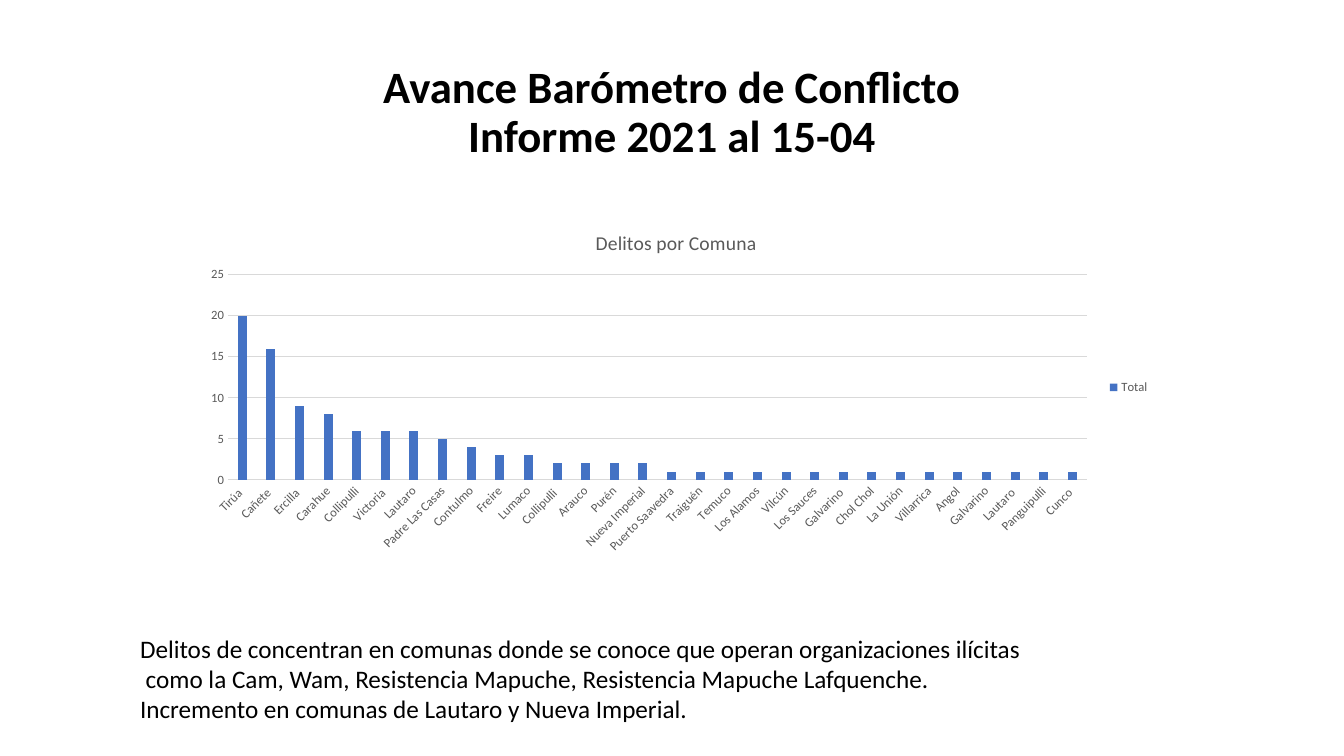
import pptx
import pptx.chart.data
import pptx.dml.color
import pptx.enum.chart
import pptx.enum.text
import pptx.util
from lxml import etree

Cm, Pt = pptx.util.Cm, pptx.util.Pt

# Content
HEADING = ["Avance Barómetro de Conflicto\vInforme 2021 al 15-04"]
FINDINGS = [
    "Delitos de concentran en comunas donde se conoce que operan organizaciones ilícitas",
    " como la Cam, Wam, Resistencia Mapuche, Resistencia Mapuche Lafquenche.",
    "Incremento en comunas de Lautaro y Nueva Imperial.",
]
CHART_TITLE = "Delitos por Comuna"
SERIES_NAME = "Total"
CRIMES_BY_COMMUNE = [
    ("Tirúa ", 20), ("Cañete ", 16), ("Ercilla ", 9), ("Carahue", 8),
    ("Collipulli", 6), ("Victoria ", 6), ("Lautaro", 6),
    ("Padre Las Casas", 5), ("Contulmo", 4), ("Freire", 3), ("Lumaco", 3),
    ("Collipulli ", 2), ("Arauco", 2), ("Purén", 2), ("Nueva Imperial", 2),
    ("Puerto Saavedra", 1), ("Traiguén", 1), ("Temuco", 1),
    ("Los Alamos", 1), ("Vilcún", 1), ("Los Sauces", 1), ("Galvarino ", 1),
    ("Chol Chol", 1), ("La Unión", 1), ("Villarrica", 1), ("Angol", 1),
    ("Galvarino", 1), ("Lautaro ", 1), ("Panguipulli", 1), ("Cunco ", 1),
]
FONT = "Calibri"
BLACK, GREY, RULE, BAR = "000000", "595959", "D9D9D9", "4472C4"
# Inner plot area, in percent of the chart
PLOT_AREA = {"x": 3.67, "y": 17.6, "w": 88.77, "h": 59.05}


def color(hex_string):
    return pptx.dml.color.RGBColor.from_string(hex_string)


def style_font(font, size, hex_string, bold=False):
    font.name, font.size, font.bold = FONT, Pt(size), bold
    font.color.rgb = color(hex_string)


def add_text(slide, lines, box, size, bold=False, align="LEFT", anchor="TOP",
             spacing=1.0, wrap=True):
    frame = slide.shapes.add_textbox(*map(Cm, box)).text_frame
    frame.word_wrap = wrap
    frame.vertical_anchor = getattr(pptx.enum.text.MSO_ANCHOR, anchor)
    if not wrap:
        frame.auto_size = pptx.enum.text.MSO_AUTO_SIZE.SHAPE_TO_FIT_TEXT
    frame.text = "\n".join(lines)
    for paragraph in frame.paragraphs:
        paragraph.alignment = getattr(pptx.enum.text.PP_ALIGN, align)
        paragraph.line_spacing = spacing
        for run in paragraph.runs:
            style_font(run.font, size, BLACK, bold)


def style_line(line, hex_string, width=0.75):
    line.color.rgb = color(hex_string)
    line.width = Pt(width)


def set_plot_area(chart):
    plot_area = chart.element.chart.plotArea
    namespace = etree.QName(plot_area).namespace
    for old in plot_area.findall(f"{{{namespace}}}layout"):
        plot_area.remove(old)
    layout = etree.Element(f"{{{namespace}}}layout")
    manual = etree.SubElement(layout, f"{{{namespace}}}manualLayout")
    settings = {"layoutTarget": "inner", "xMode": "edge", "yMode": "edge"}
    settings.update((side, share / 100) for side, share in PLOT_AREA.items())
    for tag, value in settings.items():
        etree.SubElement(manual, f"{{{namespace}}}{tag}").set("val", str(value))
    plot_area.insert(0, layout)


def add_crime_chart(slide, box):
    crimes = pptx.chart.data.CategoryChartData()
    communes, counts = zip(*CRIMES_BY_COMMUNE)
    crimes.categories = communes
    crimes.add_series(SERIES_NAME, counts)
    kinds = pptx.enum.chart
    chart = slide.shapes.add_chart(
        kinds.XL_CHART_TYPE.COLUMN_CLUSTERED, *map(Cm, box), crimes).chart
    style_font(chart.font, 10, BLACK)
    set_plot_area(chart)

    # Title and legend
    chart.has_title = True
    chart.chart_title.include_in_layout = False
    chart_title = chart.chart_title.text_frame
    chart_title.text = CHART_TITLE
    style_font(chart_title.paragraphs[0].runs[0].font, 14, GREY)
    chart.has_legend = True
    chart.legend.position = kinds.XL_LEGEND_POSITION.RIGHT
    chart.legend.include_in_layout = False
    style_font(chart.legend.font, 9, GREY)

    # Bars
    bars = chart.plots[0]
    bars.vary_by_categories = False
    bars.gap_width, bars.overlap = 219, -27
    fill = bars.series[0].format.fill
    fill.solid()
    fill.fore_color.rgb = color(BAR)

    # Axes, with commune labels turned 45 degrees
    communes_axis, counts_axis = chart.category_axis, chart.value_axis
    for axis in (communes_axis, counts_axis):
        axis.major_tick_mark = axis.minor_tick_mark = kinds.XL_TICK_MARK.NONE
        style_font(axis.tick_labels.font, 9, GREY)
    style_line(communes_axis.format.line, RULE)
    for label_body in chart.element.xpath(".//c:catAx/c:txPr/a:bodyPr"):
        label_body.set("rot", str(-45 * 60000))
    counts_axis.minimum_scale, counts_axis.maximum_scale = 0, 25
    counts_axis.major_unit = 5
    counts_axis.format.line.fill.background()
    style_line(counts_axis.major_gridlines.format.line, RULE)


def main():
    deck = pptx.Presentation()
    deck.slide_width, deck.slide_height = Cm(33.87), Cm(19.05)
    slide = deck.slides.add_slide(deck.slide_layouts[6])
    add_text(slide, HEADING, (2.33, 1.02, 29.21, 3.68), 32, bold=True,
             align="CENTER", anchor="MIDDLE", spacing=0.9)
    add_text(slide, FINDINGS, (3.28, 15.83, 22.99, 2.57), 18, wrap=False)
    add_crime_chart(slide, (4.85, 5.38, 24.38, 8.76))
    deck.save("out.pptx")


if __name__ == "__main__":
    main()
